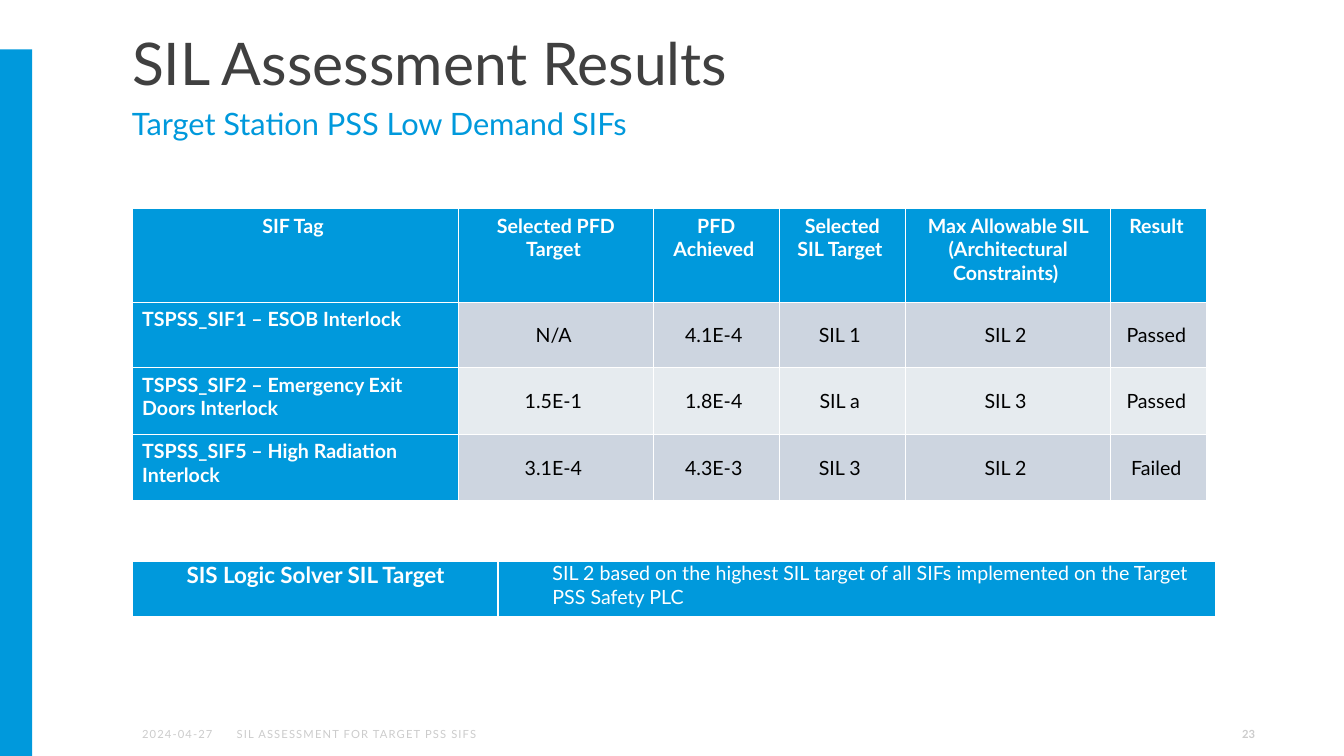
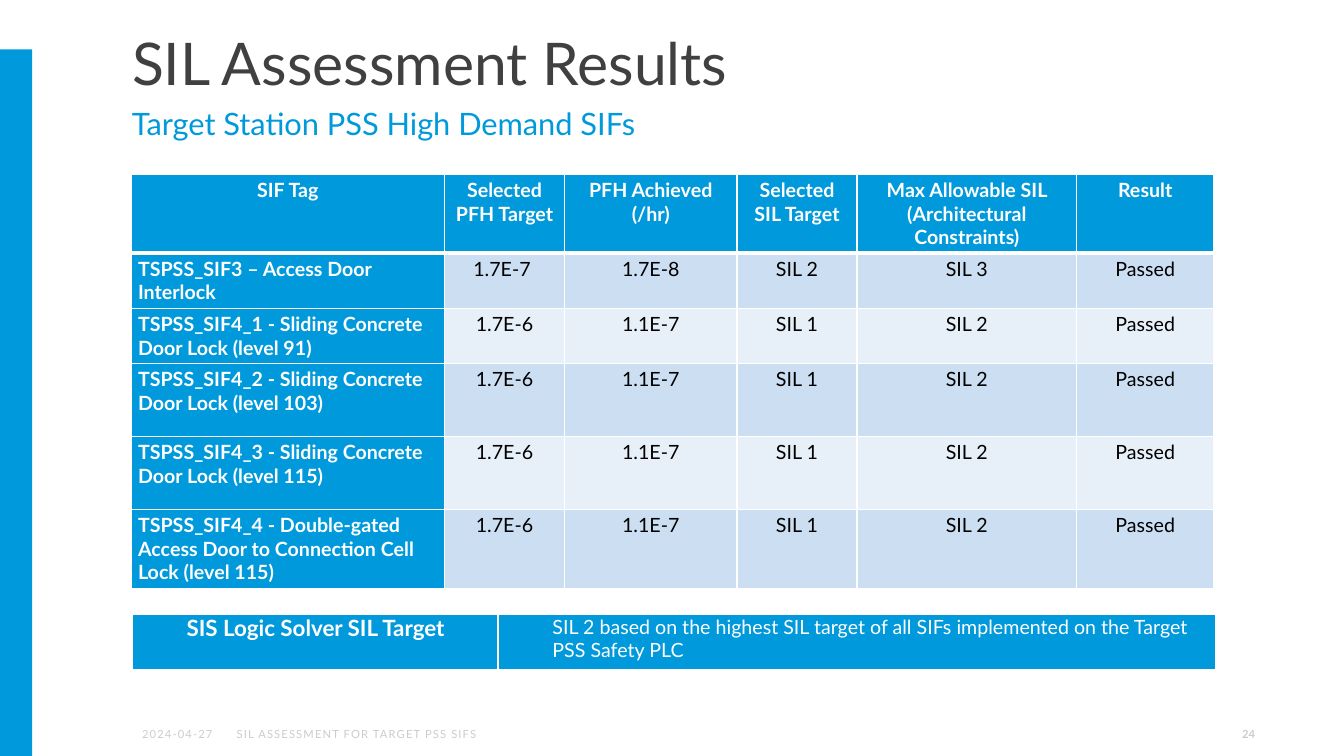
"""Build the two SIL assessment result slides."""
import pptx
import pptx.dml.color
import pptx.enum.shapes
import pptx.enum.text
import pptx.oxml
import pptx.oxml.ns
import pptx.util

Pt, Inches = pptx.util.Pt, pptx.util.Inches
ALIGN, ANCHOR = pptx.enum.text.PP_ALIGN, pptx.enum.text.MSO_ANCHOR

COLORS = {
    "blue": "0099DC", "title": "404040", "footer": "CCCCCC", "white": "FFFFFF", "black": "000000",
    "grey_dark": "CDD5E0", "grey_light": "E6EBEF", "sky_dark": "CCDEF2", "sky_light": "E7EFF9",
}
STYLES = {
    "title": {"size": Pt(42), "color": "title"},
    "subtitle": {"size": Pt(22), "color": "blue"},
    "footer": {"size": Pt(8), "color": "footer"},
    "number": {"size": Pt(8), "color": "footer", "bold": True},
    "label": {"size": Pt(14), "color": "white", "bold": True},
    "value": {"size": Pt(14), "color": "black", "bold": False},
    "solver": {"size": Pt(16), "color": "white", "bold": True},
    "note": {"size": Pt(14), "color": "white", "bold": False},
}
TEXT_INSETS = (0.1, 0.05, 0.1, 0.05)
SOLVER_INSETS = (0.04, 0, 0.07, 0)
TALL_LEFT = 9.83
SOLVER = ("SIS Logic Solver SIL Target",
          "SIL 2 based on the highest SIL target of all SIFs implemented on the Target PSS Safety PLC")

slides = [
    {
        "subtitle": "Target Station PSS Low Demand SIFs",
        "left": TALL_LEFT, "top": 27.6, "solver_top": 74.27,
        "cols": [24.3, 14.48, 9.38, 9.38, 15.3, 7.13], "rows": [12.4, 8.67, 8.8, 8.8],
        "bands": ("grey_dark", "grey_light"), "line": 0.75, "header_line": 0.75,
        "insets": TEXT_INSETS, "anchor": ANCHOR.MIDDLE, "tail": " ",
        "cells": [
            ("SIF Tag", "Selected PFD Target", "PFD Achieved", "Selected SIL Target",
             "Max Allowable SIL (Architectural Constraints)", "Result"),
            ("TSPSS_SIF1 – ESOB Interlock", "N/A", "4.1E-4", "SIL 1", "SIL 2", "Passed"),
            ("TSPSS_SIF2 – Emergency Exit Doors Interlock", "1.5E-1", "1.8E-4", "SIL a", "SIL 3", "Passed"),
            ("TSPSS_SIF5 – High Radiation Interlock", "3.1E-4", "4.3E-3", "SIL 3", "SIL 2", "Failed"),
        ],
    },
    {
        "subtitle": "Target Station PSS High Demand SIFs",
        "left": 9.75, "top": 23.07, "solver_top": 81.33,
        "cols": [23.33, 8.93, 12.83, 8.93, 16.35, 10.2], "rows": [10.2, 7.3, 7.3, 9.67, 9.67, 10.4],
        "bands": ("sky_dark", "sky_light"), "line": 1, "header_line": 3,
        "insets": (0.07, 0.04, 0.07, 0.04), "anchor": ANCHOR.TOP, "tail": "",
        "cells": [
            ("SIF Tag", "Selected PFH Target", "PFH Achieved (/hr)", "Selected SIL Target",
             "Max Allowable SIL (Architectural Constraints)", "Result"),
            ("TSPSS_SIF3 – Access Door Interlock", "1.7E-7 ", "1.7E-8", "SIL 2", "SIL 3", "Passed"),
        ] + [
            (tag, "1.7E-6", "1.1E-7", "SIL 1", "SIL 2", "Passed") for tag in (
                "TSPSS_SIF4_1 - Sliding Concrete Door Lock (level 91)",
                "TSPSS_SIF4_2 - Sliding Concrete Door Lock (level 103)",
                "TSPSS_SIF4_3 - Sliding Concrete Door Lock (level 115)",
                "TSPSS_SIF4_4 - Double-gated Access Door to Connection Cell Lock (level 115)")
        ],
    },
]

prs = pptx.Presentation()
prs.slide_width, prs.slide_height = Inches(13.33), Inches(7.5)
W, H = prs.slide_width / 100, prs.slide_height / 100


def write(box, tf, text, style, insets=TEXT_INSETS, anchor=ANCHOR.TOP, align=ALIGN.LEFT):
    """Put one styled paragraph in a shape's text frame or a table cell."""
    for side, inset in zip(("left", "top", "right", "bottom"), insets):
        setattr(box, "margin_" + side, Inches(inset))
    box.vertical_anchor = anchor
    tf.word_wrap = True
    p = tf.paragraphs[0]
    p.alignment = align
    r = p.add_run()
    r.text = text
    r.font.name = "Lato"
    for key, value in STYLES[style].items():
        if key == "color":
            r.font.color.rgb = pptx.dml.color.RGBColor.from_string(COLORS[value])
        else:
            setattr(r.font, key, value)
    return p


def add_grid(s, left, top, cols, rows, line, first_line):
    """Add a plain table with white borders, sized in shares of the slide."""
    shape = s.shapes.add_table(len(rows), len(cols), int(left * W), int(top * H),
                               int(sum(cols) * W), int(sum(rows) * H))
    table = shape.table
    table.first_row = table.horz_banding = False
    for col, width in zip(table.columns, cols):
        col.width = int(width * W)
    for i, (row, height) in enumerate(zip(table.rows, rows)):
        row.height = int(height * H)
        for cell in row.cells:
            tc_pr = cell._tc.get_or_add_tcPr()
            for side in "LRTB":
                width = first_line if side == "B" and i == 0 else line
                tc_pr.append(pptx.oxml.parse_xml(
                    f'<a:ln{side} {pptx.oxml.ns.nsdecls("a")} w="{Pt(width)}"><a:solidFill>'
                    f'<a:srgbClr val="{COLORS["white"]}"/></a:solidFill></a:ln{side}>'))
            cell.fill.solid()
            cell.fill.fore_color.rgb = pptx.dml.color.RGBColor.from_string(COLORS["blue"])
    return table


for number, data in enumerate(slides, 23):
    s = prs.slides.add_slide(prs.slide_layouts[5])
    bar = s.shapes.add_shape(pptx.enum.shapes.MSO_SHAPE.RECTANGLE, 0, int(6.53 * H), int(2.4 * W), int(93.47 * H))
    bar.shadow.inherit = False
    bar.fill.solid()
    bar.fill.fore_color.rgb = pptx.dml.color.RGBColor.from_string(COLORS["blue"])
    bar.line.fill.background()

    title = s.shapes.title
    title.left, title.top, title.width, title.height = int(9.08 * W), int(3.87 * H), int(76.8 * W), int(9.6 * H)
    tf = title.text_frame
    tf.auto_size = pptx.enum.text.MSO_AUTO_SIZE.NONE
    p = write(tf, tf, "SIL Assessment Results", "title", (0.1, 0.05, 0.1, 0.02))
    p.line_spacing = 0.9

    for text, style, left, top, width, height, insets, anchor, align, spacing in (
        (data["subtitle"], "subtitle", 9.08, 13.6, 76.8, 7.33, (0.1, 0.02, 0.1, 0.05), ANCHOR.TOP, ALIGN.LEFT, 0),
        ("2024-04-27", "footer", 9.83, 94.4, 6.83, 5.33, TEXT_INSETS, ANCHOR.MIDDLE, ALIGN.LEFT, 80),
        ("SIL ASSESSMENT FOR TARGET PSS SIFS", "footer", 16.88, 94.4, 35.4, 5.33,
         TEXT_INSETS, ANCHOR.MIDDLE, ALIGN.LEFT, 80),
        (str(number), "number", 71.63, 94.4, 22.5, 5.33, TEXT_INSETS, ANCHOR.MIDDLE, ALIGN.RIGHT, 0),
    ):
        sp = s.shapes.add_textbox(int(left * W), int(top * H), int(width * W), int(height * H))
        p = write(sp.text_frame, sp.text_frame, text, style, insets, anchor, align)
        if spacing:
            p.runs[0].font._element.set("spc", str(spacing))

    table = add_grid(s, data["left"], data["top"], data["cols"], data["rows"], data["line"], data["header_line"])
    for i, texts in enumerate(data["cells"]):
        for j, text in enumerate(texts):
            cell = table.cell(i, j)
            is_value = i > 0 and j > 0
            if is_value:
                band = data["bands"][(i - 1) % 2]
                cell.fill.fore_color.rgb = pptx.dml.color.RGBColor.from_string(COLORS[band])
            write(cell, cell.text_frame, text + data["tail"], "value" if is_value else "label", data["insets"],
                  data["anchor"] if is_value else ANCHOR.TOP,
                  ALIGN.LEFT if i > 0 and j == 0 else ALIGN.CENTER)

    table = add_grid(s, TALL_LEFT, data["solver_top"], [27.23, 53.4], [7.4], 1, 3)
    for j, (text, style) in enumerate(zip(SOLVER, ("solver", "note"))):
        cell = table.cell(0, j)
        p = write(cell, cell.text_frame, text, style, SOLVER_INSETS)
        p._p.get_or_add_pPr().set("marL", str(Inches(0.5)))

prs.save("out.pptx")
